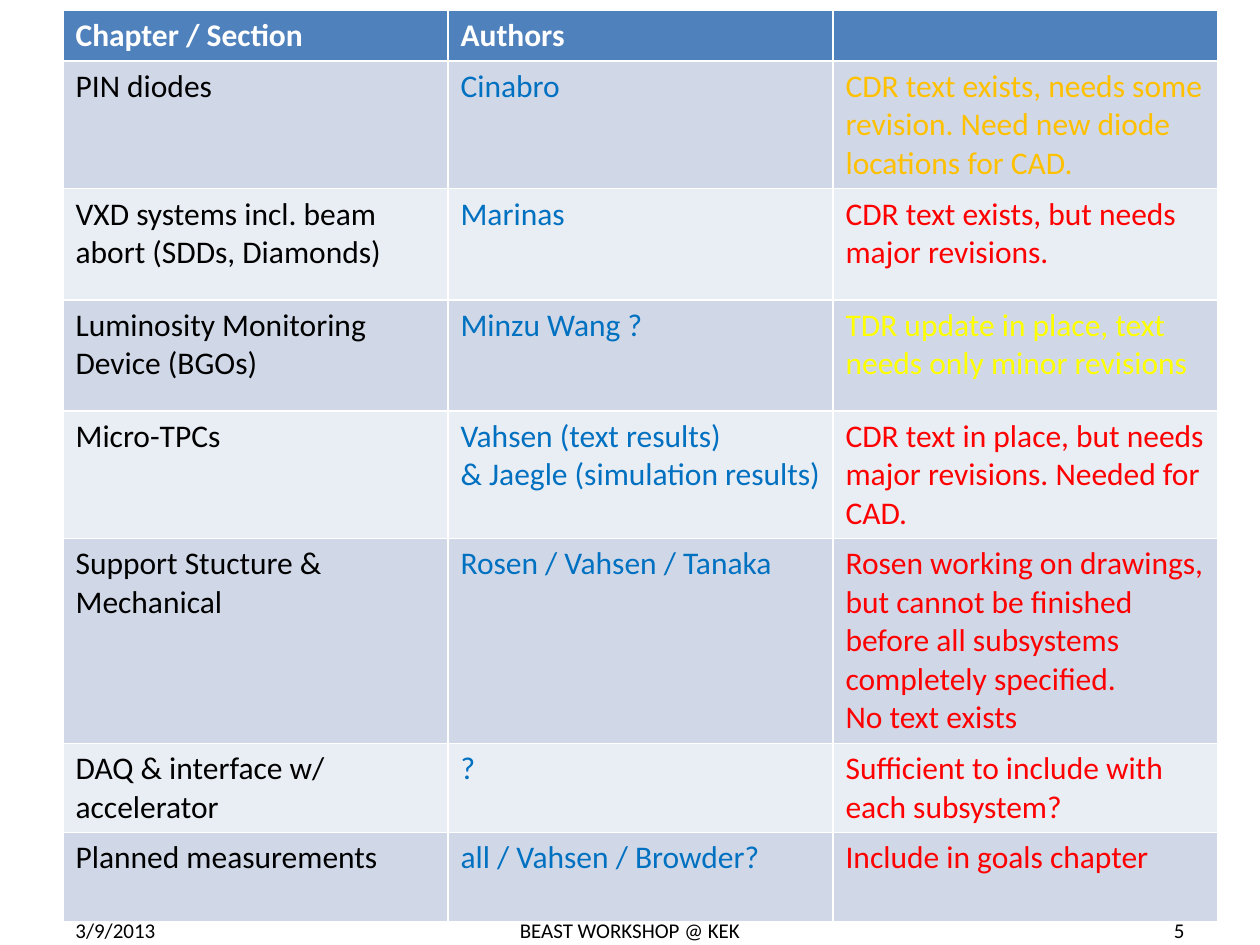
from dataclasses import dataclass

from pptx import Presentation
from pptx.dml.color import RGBColor
from pptx.enum.text import MSO_ANCHOR, PP_ALIGN
from pptx.util import Pt


@dataclass(frozen=True)
class Theme:
    font: str = "Calibri"
    table_size: int = 18
    footer_size: int = 12
    text: str = "000000"
    header_text: str = "FFFFFF"
    header_fill: str = "4F81BD"
    bands: tuple = ("D0D8E8", "E9EDF4")
    author: str = "0070C0"
    minor: str = "FFFF00"
    moderate: str = "FFC000"
    major: str = "FF0000"


THEME = Theme()

HEADERS = ["Chapter / Section", "Authors", ""]

# section, authors, status, status colour, row height
# "\n" starts a paragraph, "\v" breaks a line
SECTIONS = [
    ("PIN diodes", "Cinabro",
     "CDR text exists, needs some revision. Need new diode locations for CAD.",
     THEME.moderate, 73),
    ("VXD systems incl. beam abort (SDDs, Diamonds)", "Marinas",
     "CDR text exists, but needs major revisions.", THEME.major, 63.5),
    ("Luminosity Monitoring Device (BGOs)", "Minzu Wang ?",
     "TDR update in place, text needs only minor revisions", THEME.minor, 63.5),
    ("Micro-TPCs", "Vahsen (text results)\v& Jaegle (simulation results)",
     "CDR text in place, but needs major revisions. Needed for CAD.",
     THEME.major, 73),
    ("Support Stucture & Mechanical", "Rosen / Vahsen / Tanaka",
     "Rosen working on drawings, but cannot be finished before all subsystems "
     "completely specified.\nNo text exists", THEME.major, 117),
    ("DAQ & interface w/ accelerator", "?",
     "Sufficient to include with each subsystem?", THEME.major, 51),
    ("Planned measurements", "all / Vahsen / Browder?",
     "Include in goals chapter", THEME.major, 51),
]

# text, left, width, alignment
FOOTERS = [
    ("3/9/2013", 36, 168, PP_ALIGN.LEFT),
    ("5", 516, 168, PP_ALIGN.RIGHT),
    ("BEAST WORKSHOP @ KEK", 216, 288, PP_ALIGN.CENTER),
]
FOOTER_TOP, FOOTER_HEIGHT = 517, 28.75

TABLE_LEFT, TABLE_TOP, TABLE_WIDTH = 36, 6, 660
HEADER_HEIGHT = 28.8


def write(text_frame, text, size, color, bold=False, alignment=PP_ALIGN.LEFT):
    for number, block in enumerate(text.split("\n")):
        paragraph = text_frame.add_paragraph() if number else text_frame.paragraphs[0]
        paragraph.alignment = alignment
        for line_number, line in enumerate(block.split("\v")):
            if line_number:
                paragraph.add_line_break()
            if line:
                run = paragraph.add_run()
                run.text = line
                run.font.name = THEME.font
                run.font.size = Pt(size)
                run.font.bold = bold
                run.font.color.rgb = RGBColor.from_string(color)


def add_footers(slide):
    for text, left, width, alignment in FOOTERS:
        box = slide.shapes.add_textbox(
            Pt(left), Pt(FOOTER_TOP), Pt(width), Pt(FOOTER_HEIGHT))
        box.text_frame.word_wrap = True
        box.text_frame.vertical_anchor = MSO_ANCHOR.MIDDLE
        write(box.text_frame, text, THEME.footer_size, THEME.text, alignment=alignment)


def fill_row(row, texts, colors, fill, height, bold=False):
    row.height = Pt(height)
    for cell, text, color in zip(row.cells, texts, colors):
        cell.fill.solid()
        cell.fill.fore_color.rgb = RGBColor.from_string(fill)
        write(cell.text_frame, text, THEME.table_size, color, bold)


def add_author_table(slide):
    height = HEADER_HEIGHT + sum(section[-1] for section in SECTIONS)
    table = slide.shapes.add_table(
        len(SECTIONS) + 1, len(HEADERS),
        Pt(TABLE_LEFT), Pt(TABLE_TOP), Pt(TABLE_WIDTH), Pt(height)).table
    header, *body = table.rows
    fill_row(header, HEADERS, [THEME.header_text] * len(HEADERS),
             THEME.header_fill, HEADER_HEIGHT, bold=True)
    for index, (row, section) in enumerate(zip(body, SECTIONS)):
        *texts, status_color, row_height = section
        fill_row(row, texts, (THEME.text, THEME.author, status_color),
                 THEME.bands[index % 2], row_height)


def main():
    presentation = Presentation()
    presentation.slide_width, presentation.slide_height = Pt(720), Pt(540)
    slide = presentation.slides.add_slide(
        presentation.slide_layouts.get_by_name("Blank"))
    add_footers(slide)
    add_author_table(slide)
    presentation.save("out.pptx")


if __name__ == "__main__":
    main()
